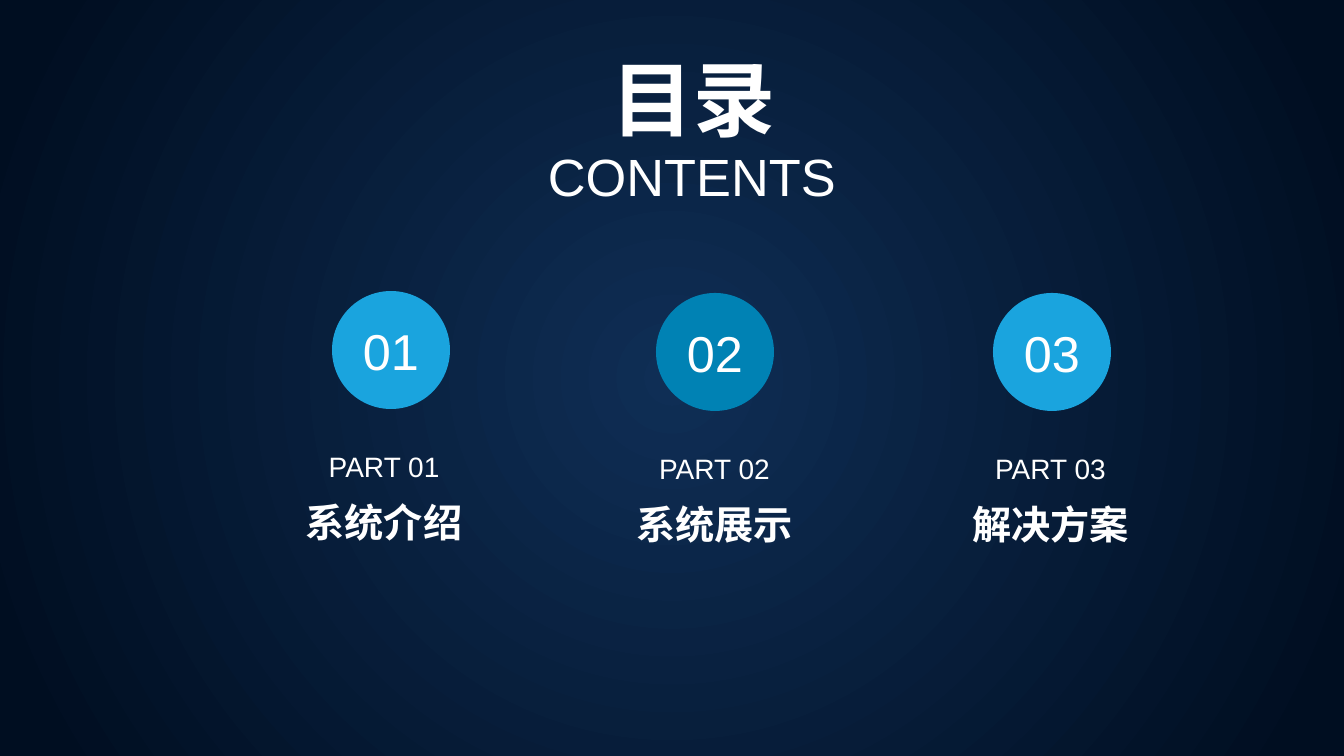
from dataclasses import dataclass

from lxml import etree
from pptx import Presentation
from pptx.dml.color import RGBColor
from pptx.enum.shapes import MSO_SHAPE
from pptx.enum.text import MSO_ANCHOR, MSO_AUTO_SIZE, PP_ALIGN
from pptx.oxml.ns import qn
from pptx.shapes.base import BaseShape
from pptx.slide import Slide
from pptx.util import Emu, Pt

EMU_PER_INCH = 914400
PX_PER_INCH = 100.8
WIDTH, HEIGHT = 1344, 756
TITLE_ONLY = 5
FONT = "Arial"

WHITE = RGBColor(0xFF, 0xFF, 0xFF)
NAVY = RGBColor(0x0F, 0x2E, 0x55)
MIDNIGHT = RGBColor(0x00, 0x0E, 0x21)
SKY = RGBColor(0x1A, 0xA4, 0xDE)
OCEAN = RGBColor(0x00, 0x82, 0xB4)

OVAL = MSO_SHAPE.OVAL
TOP, MIDDLE = MSO_ANCHOR.TOP, MSO_ANCHOR.MIDDLE
NO_AUTOFIT = MSO_AUTO_SIZE.NONE
CENTER = PP_ALIGN.CENTER

CIRCLE_SIZE = 118
LABEL_OFFSET = 157
NAME_OFFSET = 208
TEXT_HEIGHT = 52


@dataclass(frozen=True)
class Part:
    number: str
    name: str
    color: RGBColor
    circle_left: int
    top: int
    text_left: int
    text_width: int


PARTS = [
    Part("01", "系统介绍", SKY, 332, 291, 261, 246),
    Part("02", "系统展示", OCEAN, 656, 293, 585, 259),
    Part("03", "解决方案", SKY, 993, 293, 921, 259),
]


def px(length: int) -> Emu:
    return Emu(round(length * EMU_PER_INCH / PX_PER_INCH))


def write(box: BaseShape, text: str, size: float, bold: bool = False,
          anchor: MSO_ANCHOR = TOP, spacing: float = 0.9) -> None:
    frame = box.text_frame
    frame.text = text
    frame.word_wrap = True
    frame.auto_size = NO_AUTOFIT
    frame.vertical_anchor = anchor
    para = frame.paragraphs[0]
    para.alignment = CENTER
    para.line_spacing = spacing
    para.font.name = FONT
    para.font.size = Pt(size)
    para.font.bold = bold
    para.font.color.rgb = WHITE


def add_text(page: Slide, left: int, top: int, width: int, height: int,
             text: str, size: float, bold: bool = False) -> None:
    box = page.shapes.add_textbox(px(left), px(top), px(width), px(height))
    write(box, text, size, bold)


def paint_background(page: Slide) -> None:
    fill = page.background.fill
    fill.gradient()
    stops = [(0, NAVY), (0.94, MIDNIGHT)]
    for stop, (position, color) in zip(fill.gradient_stops, stops):
        stop.position = position
        stop.color.rgb = color
    gradient = page.element.find(".//" + qn("a:gradFill"))
    gradient.remove(gradient.find(qn("a:lin")))
    circle = etree.SubElement(gradient, qn("a:path"), {"path": "circle"})
    sides = {side: "50000" for side in "ltrb"}
    etree.SubElement(circle, qn("a:fillToRect"), sides)


def add_heading(page: Slide) -> None:
    title = page.shapes.title
    title.left, title.top = px(578), px(55)
    title.width, title.height = px(231), px(77)
    write(title, "目录", 58.6, bold=True)
    add_text(page, 507, 146, 370, 56, "CONTENTS", 37.4)


def add_part(page: Slide, part: Part) -> None:
    circle = page.shapes.add_shape(
        OVAL, px(part.circle_left), px(part.top), px(CIRCLE_SIZE), px(CIRCLE_SIZE))
    circle.shadow.inherit = False
    circle.fill.solid()
    circle.fill.fore_color.rgb = part.color
    circle.line.fill.background()
    write(circle, part.number, 36, anchor=MIDDLE, spacing=1.0)
    add_text(page, part.text_left, part.top + LABEL_OFFSET, part.text_width,
             TEXT_HEIGHT, f"PART {part.number}", 20)
    add_text(page, part.text_left, part.top + NAME_OFFSET, part.text_width,
             TEXT_HEIGHT, part.name, 28, bold=True)


def main() -> None:
    deck = Presentation()
    deck.slide_width, deck.slide_height = px(WIDTH), px(HEIGHT)
    page = deck.slides.add_slide(deck.slide_layouts[TITLE_ONLY])
    paint_background(page)
    add_heading(page)
    for part in PARTS:
        add_part(page, part)
    deck.save("out.pptx")


if __name__ == "__main__":
    main()
